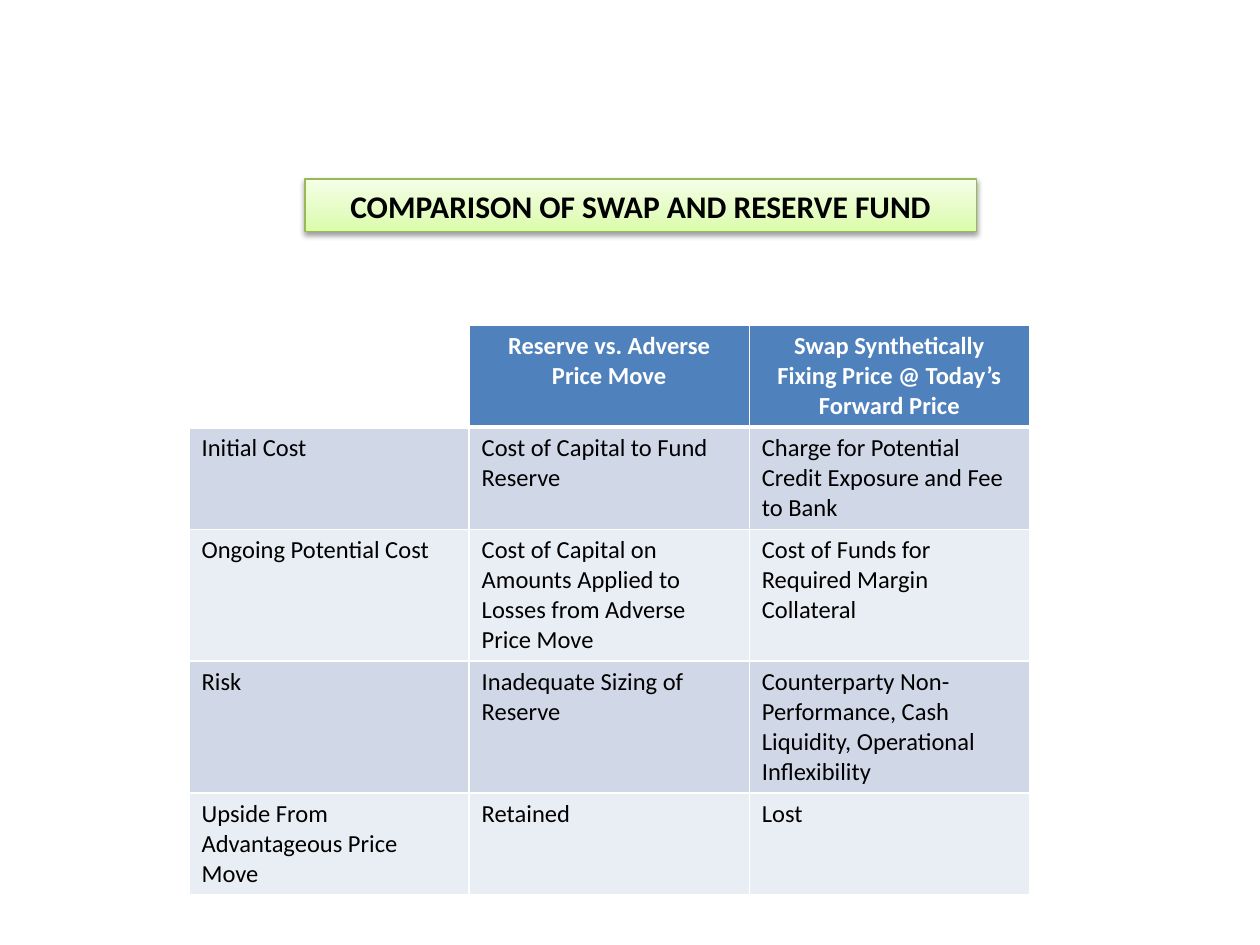
import dataclasses

import lxml.etree
import pptx
import pptx.dml.color
import pptx.enum.shapes
import pptx.enum.text
import pptx.oxml
import pptx.oxml.ns
import pptx.util


@dataclasses.dataclass(frozen=True)
class Theme:
    """Colours, font and type sizes of the slide."""

    font: str = "Calibri"
    title_size: float = 18
    table_size: float = 14
    dark: str = "000000"
    light: str = "FFFFFF"
    header: str = "4F81BD"
    bands: tuple = ("D0D8E8", "E9EDF4")
    title_line: str = "98B955"
    title_stops: tuple = ((0, "DAFDA7"), (35, "E4FCC2"), (100, "F5FFE7"))


THEME = Theme()
SLIDE_WIDTH, SLIDE_HEIGHT = pptx.util.Inches(10), pptx.util.Inches(7.5)
TITLE = "COMPARISON OF SWAP AND RESERVE FUND"
ROWS = (
    ("", "Reserve vs. Adverse Price Move",
     "Swap Synthetically Fixing Price @ Today’s Forward Price"),
    ("Initial Cost", "Cost of Capital to Fund Reserve",
     "Charge for Potential Credit Exposure and Fee to Bank"),
    ("Ongoing Potential Cost",
     "Cost of Capital on Amounts Applied to Losses from Adverse Price Move",
     "Cost of Funds for Required Margin Collateral"),
    ("Risk", "Inadequate Sizing of Reserve",
     "Counterparty Non-Performance, Cash Liquidity, Operational Inflexibility"),
    ("Upside From Advantageous Price Move", "Retained", "Lost"),
)


def box_of(left, top, width, height):
    """Turn shares of the slide into a box of lengths."""
    return (int(left * SLIDE_WIDTH), int(top * SLIDE_HEIGHT),
            int(width * SLIDE_WIDTH), int(height * SLIDE_HEIGHT))


def drawing_element(markup):
    """Parse DrawingML markup whose root lacks its namespace."""
    name, rest = markup[1:].split(" ", 1)
    return pptx.oxml.parse_xml(f"<{name} {pptx.oxml.ns.nsdecls('a')} {rest}")


def write_text(text_frame, text, size, color, bold, centred):
    """Write one formatted paragraph."""
    paragraph = text_frame.paragraphs[0]
    if centred:
        paragraph.alignment = pptx.enum.text.PP_ALIGN.CENTER
    run = paragraph.add_run()
    run.text = text
    formats = {"name": THEME.font, "size": pptx.util.Pt(size), "bold": bold}
    for attribute, value in formats.items():
        setattr(run.font, attribute, value)
    run.font.color.rgb = pptx.dml.color.RGBColor.from_string(color)


def add_title(slide, box):
    """Add the gradient title banner with its soft shadow."""
    shape = slide.shapes.add_shape(
        pptx.enum.shapes.MSO_SHAPE.RECTANGLE, *box)
    shape.line.color.rgb = pptx.dml.color.RGBColor.from_string(THEME.title_line)
    shape.line.width = pptx.util.Pt(0.75)
    stops = "".join(
        f'<a:gs pos="{position * 1000}"><a:srgbClr val="{color}"/></a:gs>'
        for position, color in THEME.title_stops)
    outline = shape.line._get_or_add_ln()
    outline.addprevious(drawing_element(
        f'<a:gradFill rotWithShape="1"><a:gsLst>{stops}</a:gsLst>'
        '<a:lin ang="16200000" scaled="0"/></a:gradFill>'))
    outline.addnext(drawing_element(
        '<a:effectLst ><a:outerShdw blurRad="40000" dist="20000" dir="5400000"'
        ' rotWithShape="0"><a:srgbClr val="000000"><a:alpha val="38000"/>'
        '</a:srgbClr></a:outerShdw></a:effectLst>'))
    shape.text_frame.word_wrap = True
    write_text(shape.text_frame, TITLE, THEME.title_size, THEME.dark, True, True)


def set_borders(cell, widths):
    """Give the four cell sides solid light borders."""
    properties = cell._tc.get_or_add_tcPr()
    for index, (side, width) in enumerate(widths.items()):
        properties.insert(index, drawing_element(
            f'<a:ln{side} w="{pptx.util.Pt(width)}"><a:solidFill>'
            f'<a:srgbClr val="{THEME.light}"/></a:solidFill></a:ln{side}>'))


def add_comparison(slide, box):
    """Add the comparison table with a header and alternating bands."""
    frame = slide.shapes.add_table(len(ROWS), len(ROWS[0]), *box)
    table = frame.table
    table.first_row, table.horz_banding = True, False
    for row_index, texts in enumerate(ROWS):
        is_header = row_index == 0
        table.rows[row_index].height = pptx.util.Inches(0.58 if is_header else 0.41)
        for column_index, text in enumerate(texts):
            cell = table.cell(row_index, column_index)
            if is_header:
                fill = THEME.header if text else THEME.light
            else:
                fill = THEME.bands[(row_index - 1) % len(THEME.bands)]
            cell.fill.solid()
            cell.fill.fore_color.rgb = pptx.dml.color.RGBColor.from_string(fill)
            set_borders(cell, {"L": 1, "R": 1, "T": 3 if row_index == 1 else 1,
                               "B": 3 if is_header else 1})
            if text:
                write_text(cell.text_frame, text, THEME.table_size,
                           THEME.light if is_header else THEME.dark,
                           is_header, is_header)
    frame.height = box[3]


def main():
    """Build and save the slide."""
    presentation = pptx.Presentation()
    sizes = {"slide_width": SLIDE_WIDTH, "slide_height": SLIDE_HEIGHT}
    for attribute, value in sizes.items():
        setattr(presentation, attribute, value)
    slide = presentation.slides.add_slide(presentation.slide_layouts[6])
    add_title(slide, box_of(2.42 / 10, 1.42 / 7.5, 5.33 / 10, 0.42 / 7.5))
    add_comparison(slide, box_of(1.5 / 10, 2.58 / 7.5, 6.67 / 10, 4.47 / 7.5))
    presentation.save("out.pptx")


if __name__ == "__main__":
    main()
